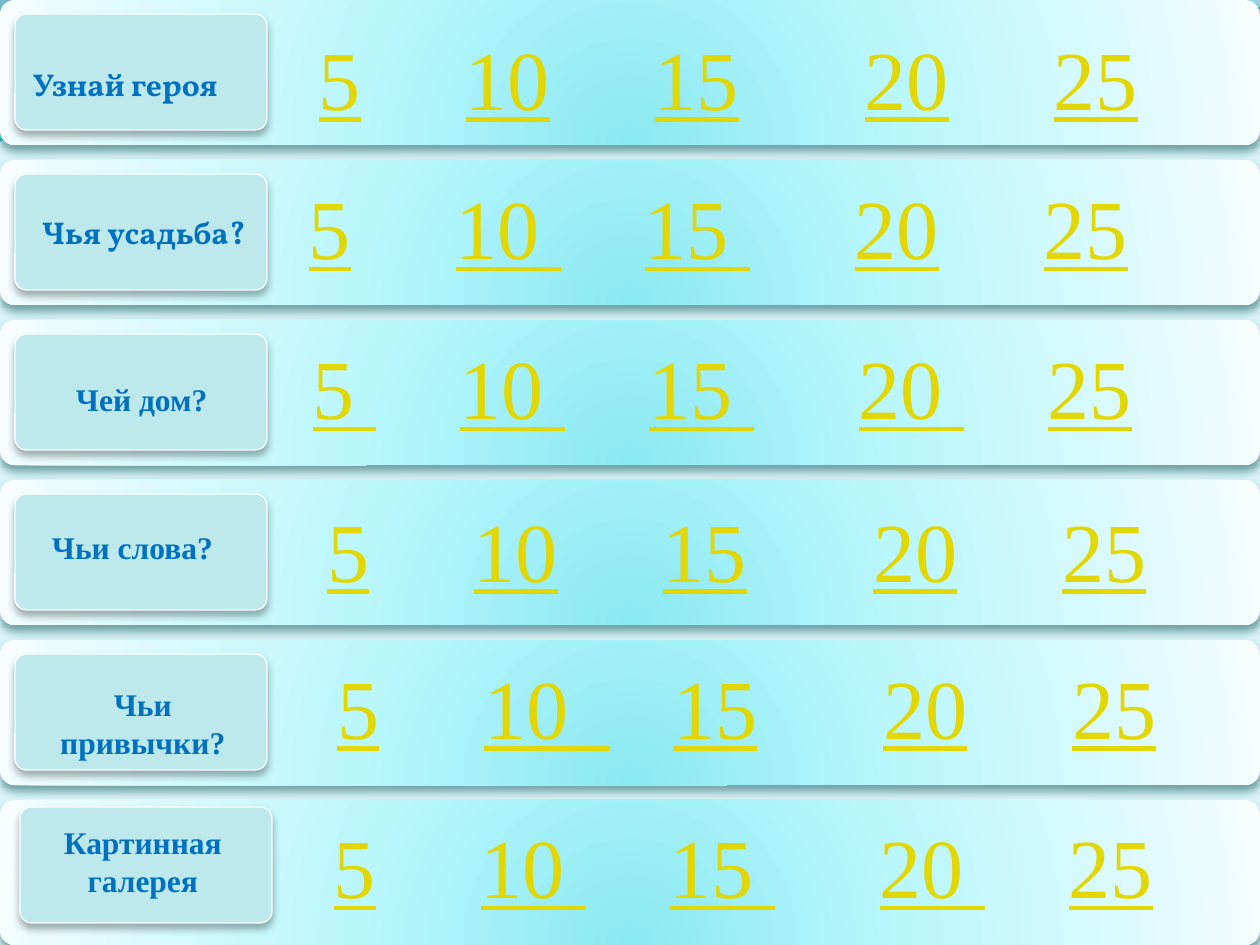
from lxml import etree
from pptx import Presentation
from pptx.dml.color import RGBColor
from pptx.enum.shapes import MSO_SHAPE
from pptx.enum.text import MSO_ANCHOR, PP_ALIGN
from pptx.oxml import parse_xml
from pptx.oxml.ns import nsdecls, qn
from pptx.util import Pt

ROUNDED = MSO_SHAPE.ROUNDED_RECTANGLE
TOP, MIDDLE = MSO_ANCHOR.TOP, MSO_ANCHOR.MIDDLE
LEFT, CENTER = PP_ALIGN.LEFT, PP_ALIGN.CENTER
EMU_PER_PX = 914400 / 126
SERIF, DISPLAY = "Times New Roman", "Vollkorn"
COLORS = {
    "background": "DBF5F9", "chip": "BDE9ED", "white": "FFFFFF",
    "label": "0070C0", "score": "E2D700",
    "row_shadow": "024B4E", "chip_shadow": "425254",
    "teal_line": "0AB8BF", "blue_line": "0F6FC6",
}
ROW_STOPS = [(0, "8BE9F1", 100), (43, "B9F7FD", 100), (93, "EAFCFE", 100), (100, "F8FEFF", 100)]
ROW_PATH = '<a:path path="circle"><a:fillToRect l="50000" t="130000" r="50000" b="-30000"/></a:path>'
DOWNWARD = '<a:lin ang="5400000" scaled="0"/>'
SCORE_TABS = [147, 336, 546, 735]
ROW_PITCH = 160
INSET = 13

WIDE_WAVE = [
    [(0, 0)],
    [(554, -1)],
    [(600, 21), (837, 79), (955, 79)],
    [(1075, 79), (1207, 33), (1260, 11)],
    [(1261, 45)],
    [(1239, 55), (1096, 96), (940, 95)],
    [(784, 95), (481, 35), (324, 43)],
    [(163, 45), (58, 105), (-1, 142)],
]
RIGHT_WAVE = [
    [(604, -1)],
    [(641, 14), (859, 78), (969, 82)],
    [(1079, 87), (1211, 40), (1260, 26)],
    [(1260, 0)],
]
TEAL_CURVE = [
    [(0, 140)],
    [(60, 117), (199, 72), (349, 66)],
    [(498, 59), (747, 112), (898, 101)],
    [(1050, 89), (1182, 19), (1257, -3)],
]
BLUE_CURVE = [
    [(0, 131)],
    [(59, 121), (207, 77), (357, 71)],
    [(508, 64), (752, 106), (903, 95)],
    [(1053, 84), (1186, 26), (1260, 8)],
]

ROWS = [
    {"label": "Узнай героя", "font": DISPLAY, "label_box": (20, 59, 246, 50),
     "score_box": (286, 20, 916, 115), "start": 319, "scores": ["5", "10", "15", "20", "25"]},
    {"label": "Чья усадьба?", "font": DISPLAY, "label_box": (29, 207, 237, 50),
     "score_box": (267, 160, 993, 145), "start": 309, "anchor": MIDDLE,
     "scores": ["5", "10 ", "15 ", "20", "25"]},
    {"label": "Чей дом?", "label_box": (39, 374, 197, 50), "label_inset": 37,
     "score_box": (267, 320, 993, 145), "start": 313, "anchor": MIDDLE,
     "scores": ["5 ", "10 ", "15 ", "20 ", "25"]},
    {"label": "Чьи слова?", "label_box": (39, 522, 207, 50),
     "score_box": (315, 492, 886, 152), "start": 327, "scores": ["5", "10", "15", "20", "25"]},
    {"label": "Чьи привычки?", "label_box": (39, 679, 207, 89), "align": CENTER,
     "score_box": (325, 649, 876, 152), "start": 337, "scores": ["5", "10  ", "15", "20", "25"]},
    {"label": "Картинная галерея", "label_box": (39, 817, 207, 89), "align": CENTER,
     "chip": (20, 807), "score_box": (267, 799, 993, 145), "start": 334, "anchor": MIDDLE,
     "scores": ["5", "10 ", "15 ", "20 ", "25"]},
]


def px(value):
    return round(value * EMU_PER_PX)


def rgb(name):
    return RGBColor.from_string(COLORS[name])


class Board:
    def __init__(self, slide):
        self.slide = slide
        self.shapes = slide.shapes
        slide.background.fill.solid()
        slide.background.fill.fore_color.rgb = rgb("background")

    def gradient(self, shape, stops, direction):
        shape.fill.background()
        marks = "".join(
            f'<a:gs pos="{pos * 1000}"><a:srgbClr val="{color}">'
            f'<a:alpha val="{alpha * 1000}"/></a:srgbClr></a:gs>'
            for pos, color, alpha in stops)
        properties = shape._element.spPr
        properties.replace(properties.find(qn("a:noFill")), parse_xml(
            f'<a:gradFill {nsdecls("a")} rotWithShape="1"><a:gsLst>{marks}</a:gsLst>'
            f'{direction}</a:gradFill>'))

    def outline(self, shape, color, width):
        if color:
            shape.line.color.rgb = rgb(color)
            shape.line.width = Pt(width)
        else:
            shape.line.fill.background()

    def bend(self, curve, segments):
        corners = iter(list(curve._element.spPr.iter(qn("a:lnTo"))))
        for segment in segments:
            if len(segment) == 3:
                bezier, *ends = (next(corners) for _ in segment)
                arc = etree.Element(qn("a:cubicBezTo"))
                bezier.addprevious(arc)
                for corner in (bezier, *ends):
                    arc.append(corner[0])
                    corner.getparent().remove(corner)
            else:
                next(corners)

    def wave(self, segments, stops=None, line=None, width=0):
        (start,), *rest = segments
        builder = self.shapes.build_freeform(*start, scale=EMU_PER_PX)
        builder.add_line_segments([point for segment in rest for point in segment],
                                  close=bool(stops))
        curve = builder.convert_to_shape()
        self.bend(curve, rest)
        curve.shadow.inherit = False
        if stops:
            self.gradient(curve, stops, DOWNWARD)
        else:
            curve.fill.background()
        self.outline(curve, line, width)

    def panel(self, box, shadow, fill=None, line=None):
        panel = self.shapes.add_shape(ROUNDED, *map(px, box))
        panel.adjustments[0] = 0.1
        if fill:
            panel.fill.solid()
            panel.fill.fore_color.rgb = rgb(fill)
        else:
            self.gradient(panel, ROW_STOPS, ROW_PATH)
        self.outline(panel, line, 0.75)
        panel.shadow.inherit = False
        panel._element.spPr.find(qn("a:effectLst")).append(parse_xml(
            f'<a:outerShdw {nsdecls("a")} blurRad="{Pt(4.5)}" dist="{Pt(3)}" dir="5400000" '
            f'rotWithShape="0"><a:srgbClr val="{COLORS[shadow]}"><a:alpha val="48000"/>'
            '</a:srgbClr></a:outerShdw>'))

    def text_frame(self, box, inset, anchor=TOP):
        frame = self.shapes.add_textbox(*map(px, box)).text_frame
        frame.word_wrap = True
        frame.vertical_anchor = anchor
        frame.margin_left = px(inset)
        return frame

    def style(self, run, color, size, font):
        run.font.name = font
        run.font.size = Pt(size)
        run.font.color.rgb = rgb(color)

    def label(self, text, box, font, align, inset):
        frame = self.text_frame(box, inset)
        frame.text = text
        paragraph = frame.paragraphs[0]
        paragraph.alignment = align
        self.style(paragraph.runs[0], "label", 18, font)
        paragraph.runs[0].font.bold = True

    def scores(self, values, box, start, anchor):
        frame = self.text_frame(box, start - box[0], anchor)
        paragraph = frame.paragraphs[0]
        if anchor == MIDDLE:
            paragraph.line_spacing = 0.9
        stops = "".join(f'<a:tab pos="{px(tab)}" algn="l"/>' for tab in SCORE_TABS)
        paragraph._p.get_or_add_pPr().append(
            parse_xml(f'<a:tabLst {nsdecls("a")}>{stops}</a:tabLst>'))
        for index, value in enumerate(values):
            if index:
                gap = paragraph.add_run()
                gap.text = "\t"
                self.style(gap, "label", 48, SERIF)
            score = paragraph.add_run()
            score.text = value
            self.style(score, "score", 48, SERIF)
            score.font.underline = True


def main():
    deck = Presentation()
    deck.slide_width, deck.slide_height = px(1260), px(945)
    board = Board(deck.slides.add_slide(deck.slide_layouts[6]))
    board.wave(WIDE_WAVE, [(0, "0074A1", 45), (100, "00C6CF", 55)])
    board.wave(RIGHT_WAVE, [(0, "00A1A9", 30), (80, "008BBF", 45)])
    board.wave(TEAL_CURVE, line="teal_line", width=0.85)
    board.wave(BLUE_CURVE, line="blue_line", width=0.75)
    for index, row in enumerate(ROWS):
        top = index * ROW_PITCH
        chip = row.get("chip", (15, top + 14))
        board.panel((0, top, 1260, 145), "row_shadow")
        board.panel((*chip, 252, 116), "chip_shadow", "chip", "white")
        board.label(row["label"], row["label_box"], row.get("font", SERIF),
                    row.get("align", LEFT), row.get("label_inset", INSET))
        board.scores(row["scores"], row["score_box"], row["start"], row.get("anchor", TOP))
    deck.save("out.pptx")


if __name__ == "__main__":
    main()
